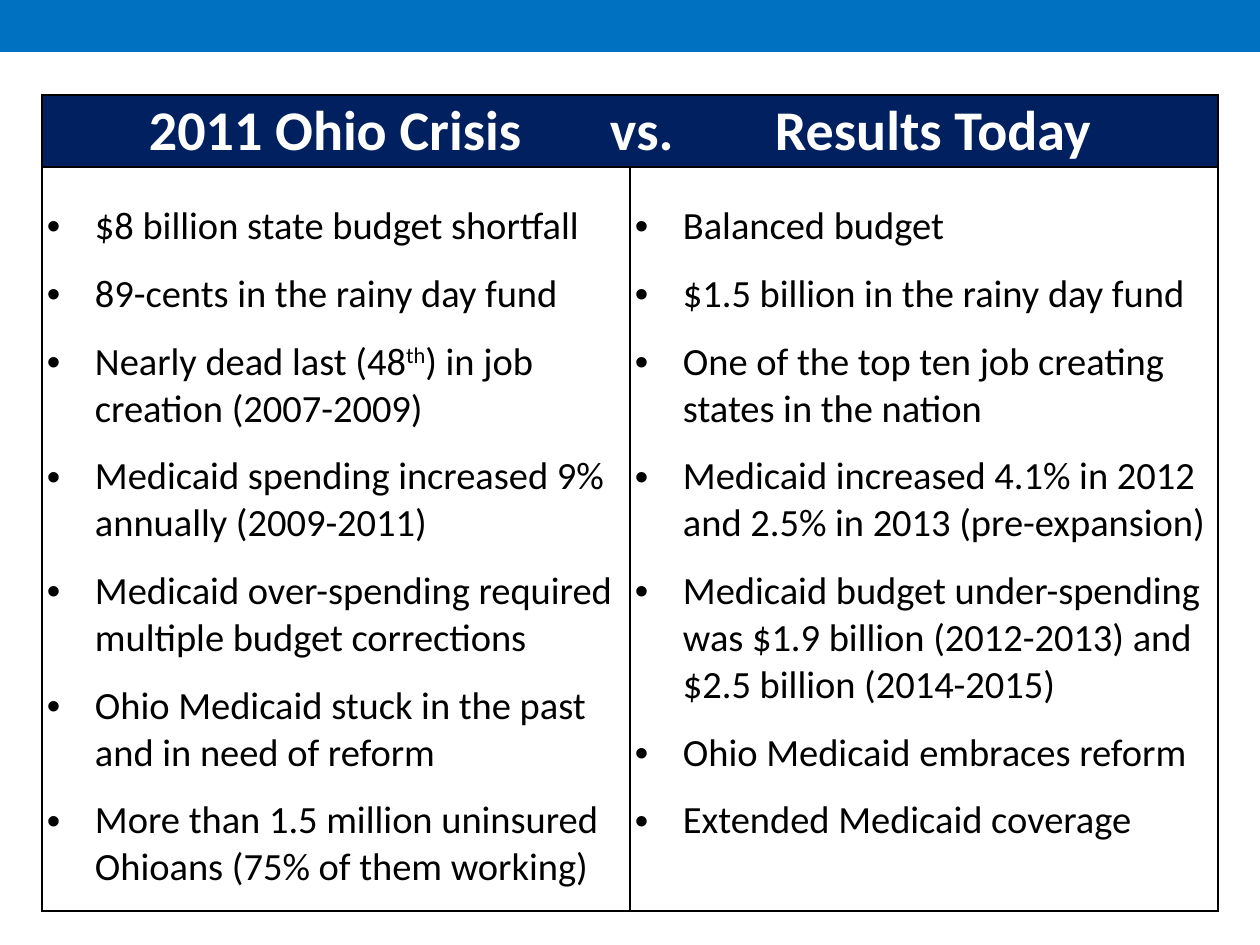
from lxml import etree
from pptx import Presentation
from pptx.dml.color import RGBColor
from pptx.enum.shapes import MSO_SHAPE
from pptx.enum.text import MSO_ANCHOR
from pptx.oxml.ns import qn
from pptx.util import Emu, Pt

RECT = MSO_SHAPE.RECTANGLE
MIDDLE, TOP = MSO_ANCHOR.MIDDLE, MSO_ANCHOR.TOP

HEADINGS = [("2011 Ohio Crisis", 102), ("vs.", 563), ("Results Today", 728)]
COLUMNS = [
    [
        "$8 billion state budget shortfall",
        "89-cents in the rainy day fund",
        "Nearly dead last (48^th^) in job creation (2007-2009)",
        "Medicaid spending increased 9% annually (2009-2011)",
        "Medicaid over-spending required multiple budget corrections",
        "Ohio Medicaid stuck in the past and in need of reform",
        "More than 1.5 million uninsured Ohioans (75% of them working)",
    ],
    [
        "Balanced budget",
        "$1.5 billion in the rainy day fund",
        "One of the top ten job creating states in the nation",
        "Medicaid increased 4.1% in 2012 and 2.5% in 2013 (pre-expansion)",
        "Medicaid budget under-spending was $1.9 billion (2012-2013) and "
        "$2.5 billion (2014-2015)",
        "Ohio Medicaid embraces reform",
        "Extended Medicaid coverage",
    ],
]

SLIDE_W, SLIDE_H, BANNER_H = 1260, 945, 52
TABLE_X, TABLE_Y, COL_W = 42, 95, 588
ROW_HEIGHTS = [72, 744]
SIDE_INSET, BODY_INSET, INDENT = 5, 36, 48
BLACK, WHITE, NAVY, BLUE = "000000", "FFFFFF", "002060", "0070C0"
HEAD_FONT = {"name": "Calibri", "size": Pt(32), "bold": True}
BODY_FONT = {"name": "Calibri", "size": Pt(22), "bold": False}


def px(n):
    return Emu(round(n * 914400 / 126))


def rgb(value):
    return RGBColor.from_string(value)


def add_run(p, text, fmt, color):
    r = p.add_run()
    r.text = text
    for name, value in fmt.items():
        setattr(r.font, name, value)
    r.font.color.rgb = rgb(color)
    return r


def style_cell(cell, fill, top, anchor):
    tcPr = cell._tc.get_or_add_tcPr()
    for side in ("lnL", "lnR", "lnT", "lnB"):
        ln = etree.SubElement(tcPr, qn(f"a:{side}"), w=str(Pt(1)))
        solid = etree.SubElement(ln, qn("a:solidFill"))
        etree.SubElement(solid, qn("a:srgbClr"), val=BLACK)
    if fill:
        cell.fill.solid()
        cell.fill.fore_color.rgb = rgb(fill)
    else:
        cell.fill.background()
    cell.margin_left = cell.margin_right = px(SIDE_INSET)
    cell.margin_top, cell.margin_bottom = px(top), 0
    cell.vertical_anchor = anchor


def write_header(cell):
    p = cell.text_frame.paragraphs[0]
    tabs = etree.SubElement(p._p.get_or_add_pPr(), qn("a:tabLst"))
    for _, x in HEADINGS:
        etree.SubElement(tabs, qn("a:tab"), pos=str(px(x)), algn="l")
    add_run(p, "".join("\t" + text for text, _ in HEADINGS), HEAD_FONT, WHITE)


def write_bullets(cell, items):
    tf = cell.text_frame
    for i, item in enumerate(items):
        p = tf.add_paragraph() if i else tf.paragraphs[0]
        pPr = p._p.get_or_add_pPr()
        pPr.set("marL", str(px(INDENT)))
        pPr.set("indent", str(-px(INDENT)))
        etree.SubElement(pPr, qn("a:buFont"), typeface="Arial")
        etree.SubElement(pPr, qn("a:buChar"), char="•")
        p.space_before, p.space_after = Pt(3 if i else 0), Pt(9)
        for k, part in enumerate(item.split("^")):
            r = add_run(p, part, BODY_FONT, BLACK)
            if k % 2:
                r._r.get_or_add_rPr().set("baseline", "30000")


prs = Presentation()
prs.slide_width, prs.slide_height = px(SLIDE_W), px(SLIDE_H)
s = prs.slides.add_slide(prs.slide_layouts[6])

frame = s.shapes.add_table(2, 2, px(TABLE_X), px(TABLE_Y),
                           px(2 * COL_W), px(sum(ROW_HEIGHTS)))
table = frame.table
table.first_row = table.horz_banding = False
for row, height in zip(table.rows, ROW_HEIGHTS):
    row.height = px(height)
for c, items in enumerate(COLUMNS):
    table.columns[c].width = px(COL_W)
    style_cell(table.cell(0, c), NAVY, 0, MIDDLE)
    style_cell(table.cell(1, c), None, BODY_INSET, TOP)
    write_bullets(table.cell(1, c), items)
table.cell(0, 0).merge(table.cell(0, 1))
write_header(table.cell(0, 0))

banner = s.shapes.add_shape(RECT, 0, 0, px(SLIDE_W), px(BANNER_H))
banner.shadow.inherit = False
banner.fill.solid()
banner.fill.fore_color.rgb = rgb(BLUE)
banner.line.fill.background()

prs.save("out.pptx")
